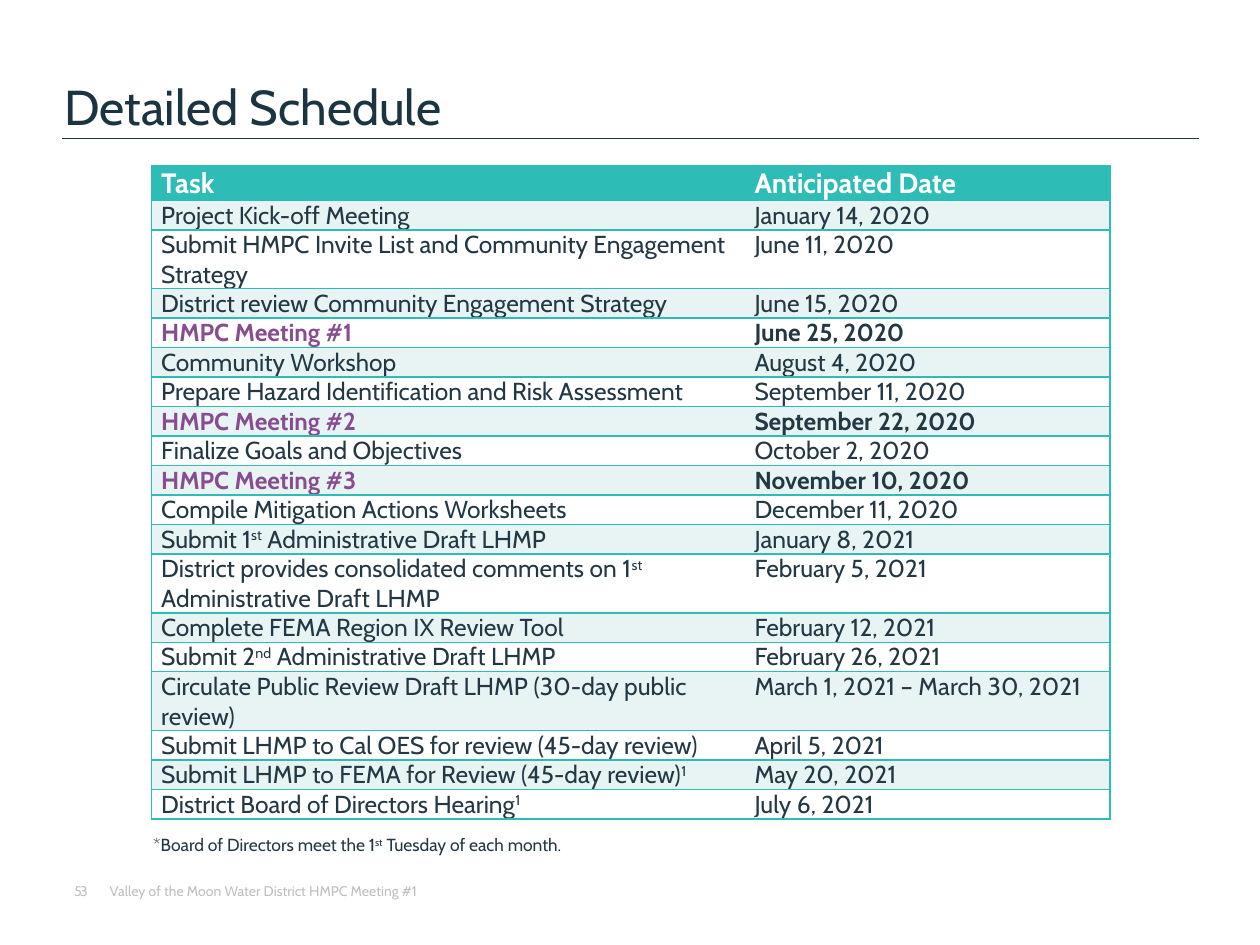
from pptx import Presentation
from pptx.dml.color import RGBColor
from pptx.enum.shapes import MSO_CONNECTOR as Link
from pptx.enum.text import MSO_ANCHOR as Anchor, PP_ALIGN as Align
from pptx.oxml.ns import qn
from pptx.util import Cm, Pt
from lxml.etree import SubElement

HUES = {
    "title": "1A3441", "ink": "233845", "teal": "2DBDB6", "mint": "E8F4F3",
    "plum": "884C91", "grey": "BFBFBF", "white": "FFFFFF",
}

# A pair of carets encloses superscript text.
TASKS = [
    ("Project Kick-off Meeting", "January 14, 2020"),
    ("Submit HMPC Invite List and Community Engagement Strategy", "June 11, 2020"),
    ("District review Community Engagement Strategy", "June 15, 2020"),
    ("HMPC Meeting #1", "June 25, 2020"),
    ("Community Workshop", "August 4, 2020"),
    ("Prepare Hazard Identification and Risk Assessment", "September 11, 2020"),
    ("HMPC Meeting #2", "September 22, 2020"),
    ("Finalize Goals and Objectives", "October 2, 2020"),
    ("HMPC Meeting #3", "November 10, 2020"),
    ("Compile Mitigation Actions Worksheets", "December 11, 2020"),
    ("Submit 1^st^ Administrative Draft LHMP", "January 8, 2021"),
    ("District provides consolidated comments on 1^st^ Administrative Draft LHMP",
     "February 5, 2021"),
    ("Complete FEMA Region IX Review Tool", "February 12, 2021"),
    ("Submit 2^nd^ Administrative Draft LHMP", "February 26, 2021"),
    ("Circulate Public Review Draft LHMP (30-day public review)",
     "March 1, 2021 – March 30, 2021"),
    ("Submit LHMP to Cal OES for review (45-day review)", "April 5, 2021"),
    ("Submit LHMP to FEMA for Review (45-day review)^1^", "May 20, 2021"),
    ("District Board of Directors Hearing^1^", "July 6, 2021"),
]
TALL = (2, 12, 15)  # rows whose task wraps to two lines


def hue(name):
    return RGBColor.from_string(HUES[name])


class Deck:
    font = "Cabin"

    def __init__(self, prs):
        self.slide = prs.slides.add_slide(prs.slide_layouts[5])

    def put(self, para, text, size, color, bold=False):
        """Fill a paragraph with styled text, raising what stands in carets."""
        for i, part in enumerate(text.split("^")):
            if part:
                run = para.add_run()
                run.text = part
                if i % 2:
                    run.font._element.set("baseline", "30000")
        font = para.font
        font.name, font.size, font.bold = self.font, Pt(size), bold
        font.color.rgb = hue(color)

    def title(self, text, box):
        shape = self.slide.shapes.title
        shape.left, shape.top, shape.width, shape.height = map(Cm, box)
        frame = shape.text_frame
        frame.margin_left = frame.margin_right = 0
        frame.margin_top = frame.margin_bottom = 0
        frame.vertical_anchor = Anchor.BOTTOM
        frame.paragraphs[0].alignment = Align.LEFT
        self.put(frame.paragraphs[0], text, 28, "title")

    def rule(self, x1, x2, y):
        line = self.slide.shapes.add_connector(
            Link.STRAIGHT, Cm(x1), Cm(y), Cm(x2), Cm(y))
        line.line.color.rgb = hue("ink")
        line.line.width = Pt(0.5)
        SubElement(line._element.spPr, qn("a:effectLst"))

    def label(self, text, box, size, color, anchor=Anchor.MIDDLE):
        frame = self.slide.shapes.add_textbox(*map(Cm, box)).text_frame
        frame.word_wrap = True
        frame.vertical_anchor = anchor
        self.put(frame.paragraphs[0], text, size, color)
        return frame.paragraphs[0]

    def edge(self, cell, shown):
        """Draw teal lines on the shown sides (of L, R, T, B) and none elsewhere."""
        props = cell._tc.get_or_add_tcPr()
        for i, side in enumerate("LRTB"):
            line = SubElement(props, qn(f"a:ln{side}"), w=str(Pt(1)))
            props.insert(i, line)
            if side in shown:
                fill = SubElement(line, qn("a:solidFill"))
                SubElement(fill, qn("a:srgbClr"), val=HUES["teal"])
            else:
                SubElement(line, qn("a:noFill"))

    def cell(self, cell, text, size, color, bold, fill, sides):
        cell.margin_left = cell.margin_right = Cm(0.2)
        cell.margin_top = cell.margin_bottom = 0
        cell.fill.solid()
        cell.fill.fore_color.rgb = hue(fill)
        self.edge(cell, sides)
        para = cell.text_frame.paragraphs[0]
        para.space_after = Pt(3)
        self.put(para, text, size, color, bold)

    def table(self, head, rows, box, widths):
        grid = self.slide.shapes.add_table(
            len(rows) + 1, len(head), *map(Cm, box)).table
        for col, width in zip(grid.columns, widths):
            col.width = Cm(width)
        for r, texts in enumerate([head, *rows]):
            grid.rows[r].height = Cm(0.69 if r == 0 else 1 if r in TALL else 0.51)
            key = texts[0].startswith("HMPC Meeting")
            for c, text in enumerate(texts):
                cell, sides = grid.cell(r, c), ("LTB", "RTB")[c]
                if r == 0:
                    self.cell(cell, text, 16, "white", True, "teal", sides)
                    cell.vertical_anchor = Anchor.BOTTOM
                else:
                    color = "plum" if key and c == 0 else "ink"
                    fill = "mint" if r % 2 else "white"
                    self.cell(cell, text, 14, color, key, fill, sides)


def main():
    prs = Presentation()
    prs.slide_width, prs.slide_height = Cm(25.4), Cm(19.05)
    deck = Deck(prs)
    deck.rule(1.25, 24.18, 2.79)
    deck.title("Detailed Schedule", (1.3, 1.02, 22.8, 1.7))
    num = deck.label("53", (1.25, 17.6, 1.42, 0.71), 8, "grey")
    num.runs[0].font._element.set("spc", "-100")
    deck.label("*Board of Directors meet the 1^st^ Tuesday of each month.",
               (2.84, 16.69, 19.56, 0.71), 10, "ink", Anchor.TOP)
    deck.label("Valley of the Moon Water District HMPC Meeting #1",
               (1.96, 17.6, 15.32, 0.71), 8, "grey")
    deck.table(("Task", "Anticipated Date"), TASKS,
               (3.05, 3.35, 19.33, 13.13), (11.96, 7.37))
    prs.save("out.pptx")


if __name__ == "__main__":
    main()
